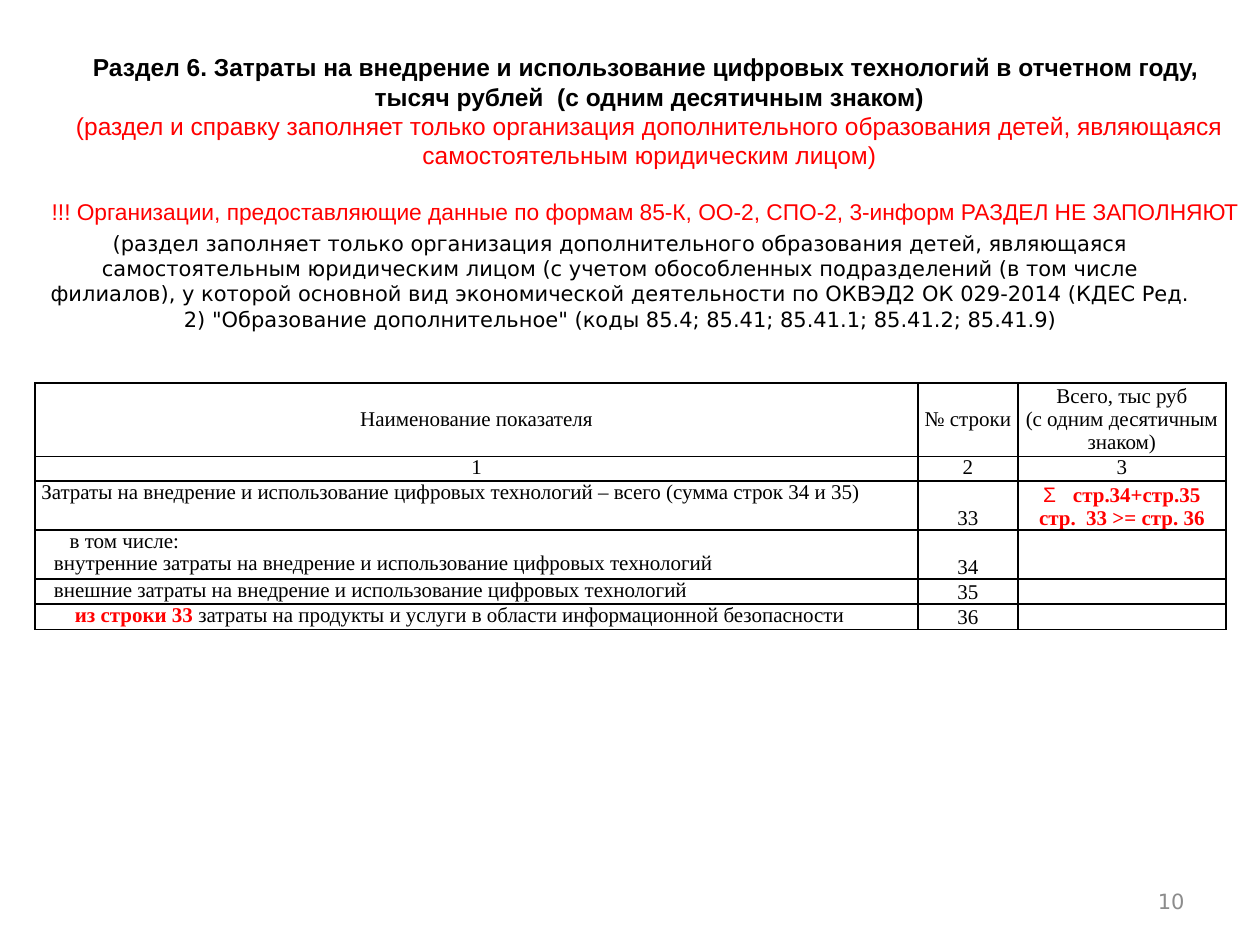
"""Build the slide on section 6: spending on digital technologies."""
import pptx
import pptx.util
import pptx.dml.color
import pptx.enum.text
import pptx.oxml.ns
from lxml import etree

Pt = pptx.util.Pt
RGBColor = pptx.dml.color.RGBColor
ALIGN = pptx.enum.text.PP_ALIGN
ANCHOR = pptx.enum.text.MSO_ANCHOR
FIT = pptx.enum.text.MSO_AUTO_SIZE
qn = pptx.oxml.ns.qn

BLACK = RGBColor(0, 0, 0)
RED = RGBColor(0xFF, 0, 0)
GRAY = RGBColor(0x8C, 0x8C, 0x8C)

SERIF = dict(font="Times New Roman", size=12)
RED_BOLD = dict(color=RED, bold=True)
CENTER = dict(align=ALIGN.CENTER)
JUSTIFY = dict(align=ALIGN.JUSTIFY)
INDENTED = dict(align=ALIGN.JUSTIFY, left=7.2)

TITLE = [
    ("Раздел 6. Затраты на внедрение и использование цифровых технологий в отчетном году, ",
     dict(bold=True)),
    ("тысяч рублей  (с одним десятичным знаком)", dict(bold=True)),
    ("(раздел и справку заполняет только организация дополнительного образования детей, "
     "являющаяся самостоятельным юридическим лицом)", dict(color=RED)),
    ("!!! Организации, предоставляющие данные по формам 85-К, ОО-2, СПО-2, 3-информ "
     "РАЗДЕЛ НЕ ЗАПОЛНЯЮТ", dict(color=RED, size=13, align=ALIGN.LEFT, before=16)),
]
NOTE = (
    "(раздел заполняет только организация дополнительного образования детей, являющаяся "
    "самостоятельным юридическим лицом (с учетом обособленных подразделений (в том числе "
    "филиалов), у которой основной вид экономической деятельности по ОКВЭД2 ОК 029-2014 "
    "(КДЕС Ред. 2) \"Образование дополнительное\" (коды 85.4; 85.41; 85.41.1; 85.41.2; 85.41.9)"
)
COLUMNS = [504.6, 57, 119]
ROWS = [
    (40, ANCHOR.MIDDLE, [
        [("Наименование показателя", CENTER)],
        [("№ строки", CENTER)],
        [("Всего, тыс руб", CENTER), ("(с одним десятичным знаком)", CENTER)]]),
    (13.3, ANCHOR.TOP, [[(n, CENTER)] for n in "123"]),
    (26.7, ANCHOR.BOTTOM, [
        [("Затраты на внедрение и использование цифровых технологий – всего "
          "(сумма строк 34 и 35)", JUSTIFY)],
        [("33", CENTER)],
        [("стр.34+стр.35", dict(CENTER, **RED_BOLD, bullet="Σ", left=17, first=-17)),
         ("стр.  33 >= стр. 36", dict(CENTER, **RED_BOLD))]]),
    (26.7, ANCHOR.BOTTOM, [
        [("в том числе:", dict(INDENTED, first=9)),
         ("внутренние затраты на внедрение и использование цифровых технологий", INDENTED)],
        [("34", CENTER)], [("", {})]]),
    (13.3, ANCHOR.BOTTOM, [
        [("внешние затраты на внедрение и использование цифровых технологий", INDENTED)],
        [("35", CENTER)], [("", {})]]),
    (13.3, ANCHOR.BOTTOM, [
        [([("из строки 33", RED_BOLD),
           (" затраты на продукты и услуги в области информационной безопасности", {})],
          dict(INDENTED, first=12))],
        [("36", CENTER)], [("", {})]]),
]


def add_text(p, text, font="Arial", size=14, color=BLACK, bold=False, align=ALIGN.CENTER,
             before=0, spacing=None, left=0, first=0, bullet=None):
    pPr = p._p.get_or_add_pPr()
    p.alignment, p.line_spacing = align, spacing
    p.space_before = Pt(before)
    pPr.set("marL", str(Pt(left)))
    pPr.set("indent", str(Pt(first)))
    if bullet:
        etree.SubElement(pPr, qn("a:buFont"), typeface="Arial")
        etree.SubElement(pPr, qn("a:buChar"), char=bullet)
    if not text:
        etree.SubElement(p._p, qn("a:endParaRPr"), sz=str(size * 100))
        return
    parts = [(text, {})] if isinstance(text, str) else text
    for words, change in parts:
        r = p.add_run()
        r.text = words
        r.font.name, r.font.size = font, Pt(size)
        r.font.bold = change.get("bold", bold)
        r.font.color.rgb = change.get("color", color)


class Slide:
    def __init__(self, prs, style):
        self.s = prs.slides.add_slide(prs.slide_layouts[5])
        self.style = style

    def fill(self, tf, paragraphs, **base):
        for i, (text, fmt) in enumerate(paragraphs):
            p = tf.paragraphs[0] if i == 0 else tf.add_paragraph()
            add_text(p, text, **{**self.style, **base, **fmt})

    def title(self, box, paragraphs):
        sp = self.s.shapes.title
        sp.left, sp.top, sp.width, sp.height = map(Pt, box)
        tf = sp.text_frame
        tf.word_wrap, tf.auto_size = True, FIT.SHAPE_TO_FIT_TEXT
        tf.vertical_anchor = ANCHOR.MIDDLE
        self.fill(tf, paragraphs)

    def text(self, box, text, anchor=ANCHOR.TOP, **fmt):
        tf = self.s.shapes.add_textbox(*map(Pt, box)).text_frame
        tf.word_wrap = True
        tf.vertical_anchor = anchor
        self.fill(tf, [(text, fmt)])

    def border(self, cell):
        tcPr = cell._tc.get_or_add_tcPr()
        for i, side in enumerate(("a:lnL", "a:lnR", "a:lnT", "a:lnB")):
            ln = etree.Element(qn(side), w=str(Pt(1)))
            fill = etree.SubElement(ln, qn("a:solidFill"))
            etree.SubElement(fill, qn("a:srgbClr"), val=str(BLACK))
            tcPr.insert(i, ln)

    def table(self, left, top, columns, rows):
        height = sum(row[0] for row in rows)
        table = self.s.shapes.add_table(len(rows), len(columns), Pt(left), Pt(top),
                                        Pt(sum(columns)), Pt(height)).table
        for column, width in zip(table.columns, columns):
            column.width = Pt(width)
        for i, (height, anchor, cells) in enumerate(rows):
            table.rows[i].height = Pt(height)
            for j, paragraphs in enumerate(cells):
                cell = table.cell(i, j)
                cell.margin_left = cell.margin_right = Pt(3.6)
                cell.margin_top = cell.margin_bottom = 0
                top_text = anchor == ANCHOR.BOTTOM and j == 0
                cell.vertical_anchor = ANCHOR.TOP if top_text else anchor
                cell.fill.background()
                self.border(cell)
                self.fill(cell.text_frame, paragraphs, **SERIF, spacing=0.97)


def main():
    prs = pptx.Presentation()
    prs.slide_width, prs.slide_height = Pt(720), Pt(540)
    slide = Slide(prs, dict(font="Arial", color=BLACK))
    slide.text((516, 500.5, 168, 28.8), "10", ANCHOR.MIDDLE,
               font="DejaVu Sans", size=12, color=GRAY, align=ALIGN.RIGHT)
    slide.table(20, 218.9, COLUMNS, ROWS)
    slide.title((22.3, 26, 697.7, 106.5), TITLE)
    slide.text((14.4, 128.2, 680.4, 65.5), NOTE, font="DejaVu Sans", size=12)
    prs.save("out.pptx")


if __name__ == "__main__":
    main()
